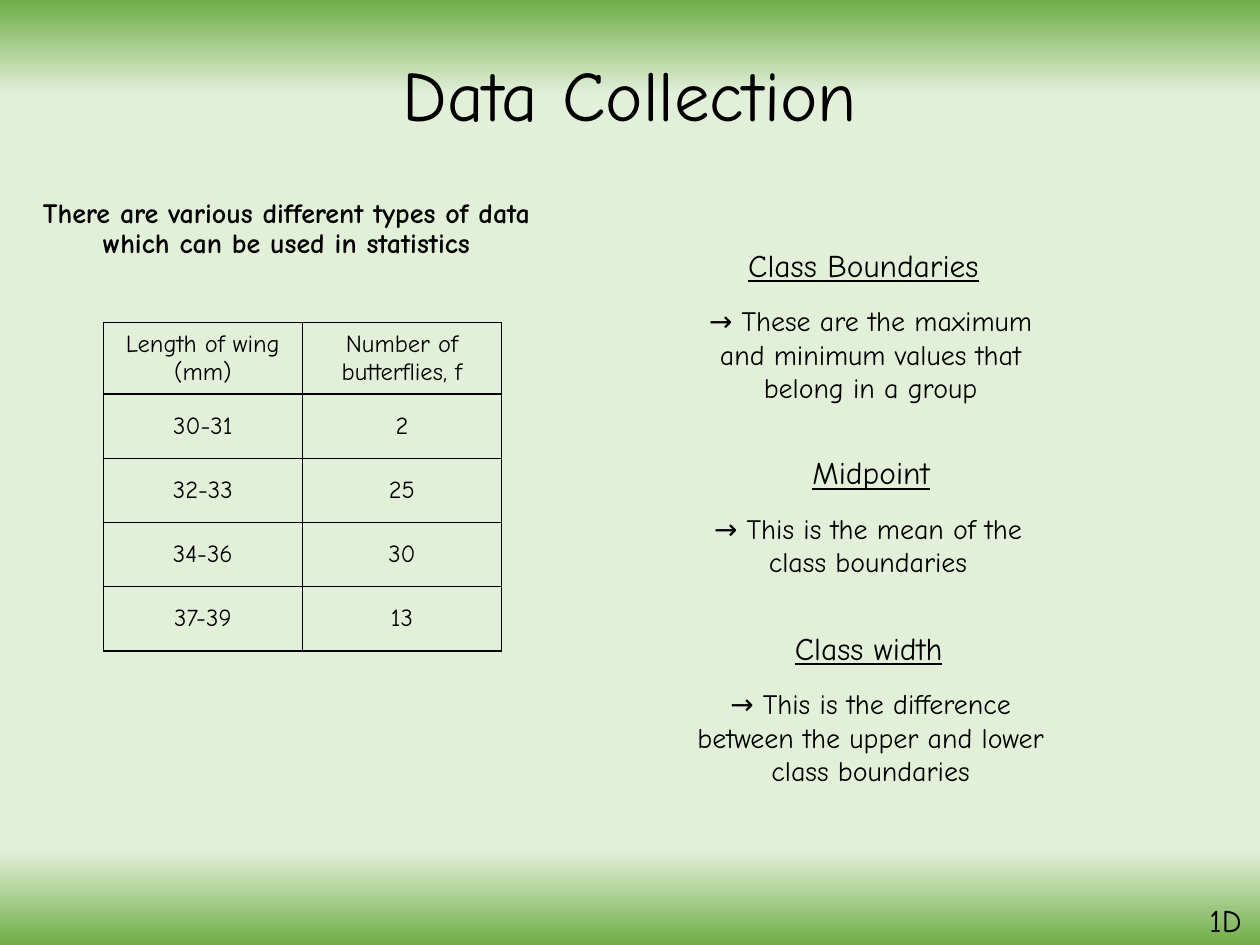
from lxml import etree
from pptx import Presentation
from pptx.dml.color import RGBColor
from pptx.enum.text import MSO_ANCHOR, MSO_AUTO_SIZE, PP_ALIGN
from pptx.oxml.ns import qn
from pptx.util import Inches, Pt

LEFT, CENTER = PP_ALIGN.LEFT, PP_ALIGN.CENTER
MIDDLE = MSO_ANCHOR.MIDDLE
GROW, FIXED = MSO_AUTO_SIZE.SHAPE_TO_FIT_TEXT, MSO_AUTO_SIZE.NONE
FONT, INK = "Comic Neue", "000000"
GREEN, PALE = "70AD47", "E2F0D9"
STOPS = [(0, GREEN), (10, PALE), (90, PALE), (100, GREEN)]
SIDES = ("a:lnL", "a:lnR", "a:lnT", "a:lnB")

ROWS = [
    ("Length of wing (mm)", "Number of butterflies, f"),
    ("30-31", "2"),
    ("32-33", "25"),
    ("34-36", "30"),
    ("37-39", "13"),
]
# heading, its left, top and width, then the note and its left and height
TERMS = [
    ("Class Boundaries", 5.84, 1.9, 2.16,
     "→ These are the maximum and minimum values that belong in a group", 5.38, 0.91),
    ("Midpoint", 6.35, 3.55, 1.23,
     "→ This is the mean of the class boundaries", 5.36, 0.64),
    ("Class width", 6.21, 4.94, 1.53,
     "→ This is the difference between the upper and lower class boundaries", 5.38, 0.91),
]


def color(code):
    return RGBColor.from_string(code)


class Deck:
    def __init__(self):
        self.prs = Presentation()
        self.prs.slide_width, self.prs.slide_height = Inches(10), Inches(7.5)
        self.slide = self.prs.slides.add_slide(self.prs.slide_layouts[5])

    def backdrop(self, stops):
        fill = self.slide.background.fill
        fill.gradient()
        fill.gradient_angle = 270
        items = self.slide.element.find(".//" + qn("a:gsLst"))
        for old in list(items):
            items.remove(old)
        for place, code in stops:
            stop = etree.SubElement(items, qn("a:gs"), pos=str(place * 1000))
            etree.SubElement(stop, qn("a:srgbClr"), val=code)

    def label(self, frame, text, size, align=CENTER, bold=False, under=False, space=None):
        """Fill a text frame and format its runs."""
        frame.text = text
        for para in frame.paragraphs:
            para.alignment = align
            if space:
                para.line_spacing = space
            for run in para.runs:
                font = run.font
                font.name, font.size = FONT, Pt(size)
                font.bold, font.underline = bold, under
                font.color.rgb = color(INK)

    def title(self, text, left, top, width, height):
        box = self.slide.shapes.title
        box.left, box.top = Inches(left), Inches(top)
        box.width, box.height = Inches(width), Inches(height)
        box.text_frame.vertical_anchor = MIDDLE
        self.label(box.text_frame, text, 40.5, space=0.9)

    def text(self, text, left, top, width, height, size, wrap=True, fit=GROW, **style):
        box = self.slide.shapes.add_textbox(
            Inches(left), Inches(top), Inches(width), Inches(height))
        frame = box.text_frame
        frame.word_wrap, frame.auto_size = wrap, fit
        self.label(frame, text, size, **style)

    def border(self, cell):
        props = cell._tc.get_or_add_tcPr()
        for place, side in enumerate(SIDES):
            line = etree.Element(qn(side), w=str(Pt(1)))
            fill = etree.SubElement(line, qn("a:solidFill"))
            etree.SubElement(fill, qn("a:srgbClr"), val=INK)
            props.insert(place, line)

    def table(self, rows, left, top, width, height):
        grid = self.slide.shapes.add_table(
            len(rows), len(rows[0]), Inches(left), Inches(top),
            Inches(width), Inches(height)).table
        grid.first_row = grid.horz_banding = False
        for r, row in enumerate(rows):
            for c, text in enumerate(row):
                cell = grid.cell(r, c)
                cell.fill.background()
                cell.vertical_anchor = MIDDLE
                self.label(cell.text_frame, text, 14)
                self.border(cell)


def main():
    deck = Deck()
    deck.backdrop(STOPS)
    deck.title("Data Collection", 0.69, 0.24, 8.62, 1.09)
    deck.text("There are various different types of data which can be used in statistics",
              0.16, 1.53, 4.23, 5.22, 16, fit=FIXED, bold=True, space=0.9)
    deck.text("1D", 9.5, 7.1, 0.5, 0.4, 18, wrap=False, align=LEFT)
    deck.table(ROWS, 0.82, 2.56, 3.16, 2.55)
    for head, left, top, width, note, edge, height in TERMS:
        deck.text(head, left, top, width, 0.4, 18, wrap=False, align=LEFT, under=True)
        deck.text(note, edge, top + 0.46, 3.06, height, 16)
    deck.prs.save("out.pptx")


if __name__ == "__main__":
    main()
